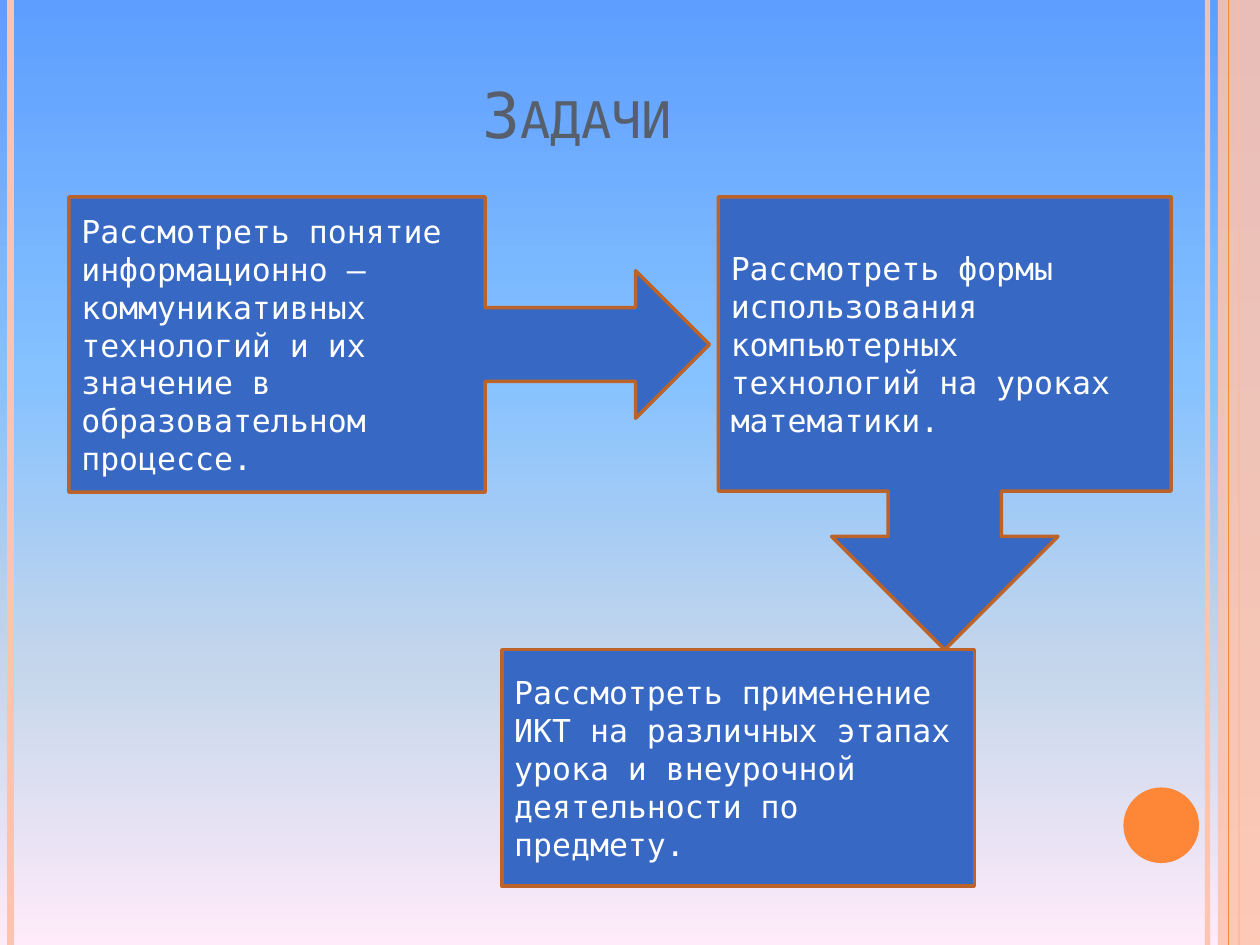
from dataclasses import dataclass

from lxml.etree import SubElement
from pptx import Presentation
from pptx.dml.color import RGBColor as RGB
from pptx.enum.shapes import MSO_CONNECTOR, MSO_SHAPE as Shape
from pptx.enum.text import MSO_ANCHOR as Anchor, MSO_AUTO_SIZE as AutoSize, PP_ALIGN as Align
from pptx.oxml.ns import qn
from pptx.util import Pt

WIDTH, HEIGHT = 720, 540


@dataclass(frozen=True)
class Theme:
    font: str = "DejaVu Sans Mono"
    title_size: int = 36
    task_size: int = 18
    title_color: str = "575F6D"
    task_text: str = "FFFFFF"
    task_fill: str = "3668C4"
    task_border: str = "BC6329"
    accent: str = "FE8637"
    pale_accent: str = "FEC3AE"
    sky: tuple = ((0, "5E9EFF"), (40, "85C2FF"), (70, "C4D6EB"), (100, "FFEBFA"))


class SlideBuilder:
    def __init__(self, slide, theme):
        self.slide = slide
        self.theme = theme

    def background(self):
        fill = self.slide.background.fill
        fill.gradient()
        fill.gradient_angle = 270
        stops = self.slide.element.find(".//" + qn("a:gsLst"))
        for stop in list(stops):
            stops.remove(stop)
        for percent, color in self.theme.sky:
            stop = SubElement(stops, qn("a:gs"), pos=str(percent * 1000))
            SubElement(stop, qn("a:srgbClr"), val=color)

    def set_alpha(self, part, percent):
        color = part.element.spPr.find(".//" + qn("a:srgbClr"))
        SubElement(color, qn("a:alpha"), val=str(percent * 1000))

    def stripe(self, x, color, weight, alpha=None):
        stripe = self.slide.shapes.add_connector(
            MSO_CONNECTOR.STRAIGHT, Pt(x), Pt(0), Pt(x), Pt(HEIGHT))
        stripe.line.color.rgb = RGB.from_string(color)
        stripe.line.width = Pt(weight)
        if alpha:
            self.set_alpha(stripe, alpha)
        SubElement(stripe.element.spPr, qn("a:effectLst"))

    def shape(self, kind, box, color, alpha=None):
        shape = self.slide.shapes.add_shape(kind, *map(Pt, box))
        shape.shadow.inherit = False
        shape.fill.solid()
        shape.fill.fore_color.rgb = RGB.from_string(color)
        shape.line.fill.background()
        if alpha:
            self.set_alpha(shape, alpha)
        return shape

    def set_text(self, frame, text, size, color, align, anchor):
        frame.text = text
        frame.word_wrap = True
        frame.auto_size = AutoSize.NONE
        frame.vertical_anchor = anchor
        paragraph = frame.paragraphs[0]
        paragraph.alignment = align
        font = paragraph.runs[0].font
        font.name = self.theme.font
        font.size = Pt(size)
        font.color.rgb = RGB.from_string(color)

    def title(self, text, box):
        title = self.slide.shapes.title
        title.left, title.top, title.width, title.height = map(Pt, box)
        self.set_text(title.text_frame, text, self.theme.title_size,
                      self.theme.title_color, Align.CENTER, Anchor.BOTTOM)
        title.element.find(".//" + qn("a:rPr")).set("cap", "small")

    def task(self, kind, box, text):
        task = self.shape(kind, box, self.theme.task_fill)
        task.line.color.rgb = RGB.from_string(self.theme.task_border)
        task.line.width = Pt(2)
        self.set_text(task.text_frame, text, self.theme.task_size,
                      self.theme.task_text, Align.LEFT, Anchor.MIDDLE)


def main():
    deck = Presentation()
    deck.slide_width, deck.slide_height = Pt(WIDTH), Pt(HEIGHT)
    theme = Theme()
    builder = SlideBuilder(deck.slides.add_slide(deck.slide_layouts[5]), theme)

    # Background and edge decoration
    builder.background()
    builder.stripe(690, theme.pale_accent, 3, alpha=93)
    builder.stripe(6, theme.pale_accent, 4.5)
    builder.stripe(708, theme.accent, 1.5)
    builder.shape(Shape.RECTANGLE, (696, 0, 24, HEIGHT), theme.pale_accent, alpha=87)
    builder.stripe(702, theme.accent, 0.75)
    builder.shape(Shape.OVAL, (642, 450, 43.2, 43.2), theme.accent)

    # Title
    builder.title("Задачи", (36, 21.6, 588, 68.4))

    # Chain of tasks
    row_top = 112.5
    builder.task(Shape.DOWN_ARROW_CALLOUT, (410.5, row_top, 258.75, 258.75),
                 "Рассмотреть формы использования компьютерных технологий "
                 "на уроках математики.")
    builder.task(Shape.RIGHT_ARROW_CALLOUT, (39.4, row_top, 366, 168.75),
                 "Рассмотреть понятие информационно – коммуникативных технологий "
                 "и их значение в образовательном процессе.")
    builder.task(Shape.FLOWCHART_PROCESS, (286.75, 371.25, 270, 135),
                 "Рассмотреть применение ИКТ на различных этапах урока "
                 "и внеурочной деятельности по предмету.")

    deck.save("out.pptx")


if __name__ == "__main__":
    main()
